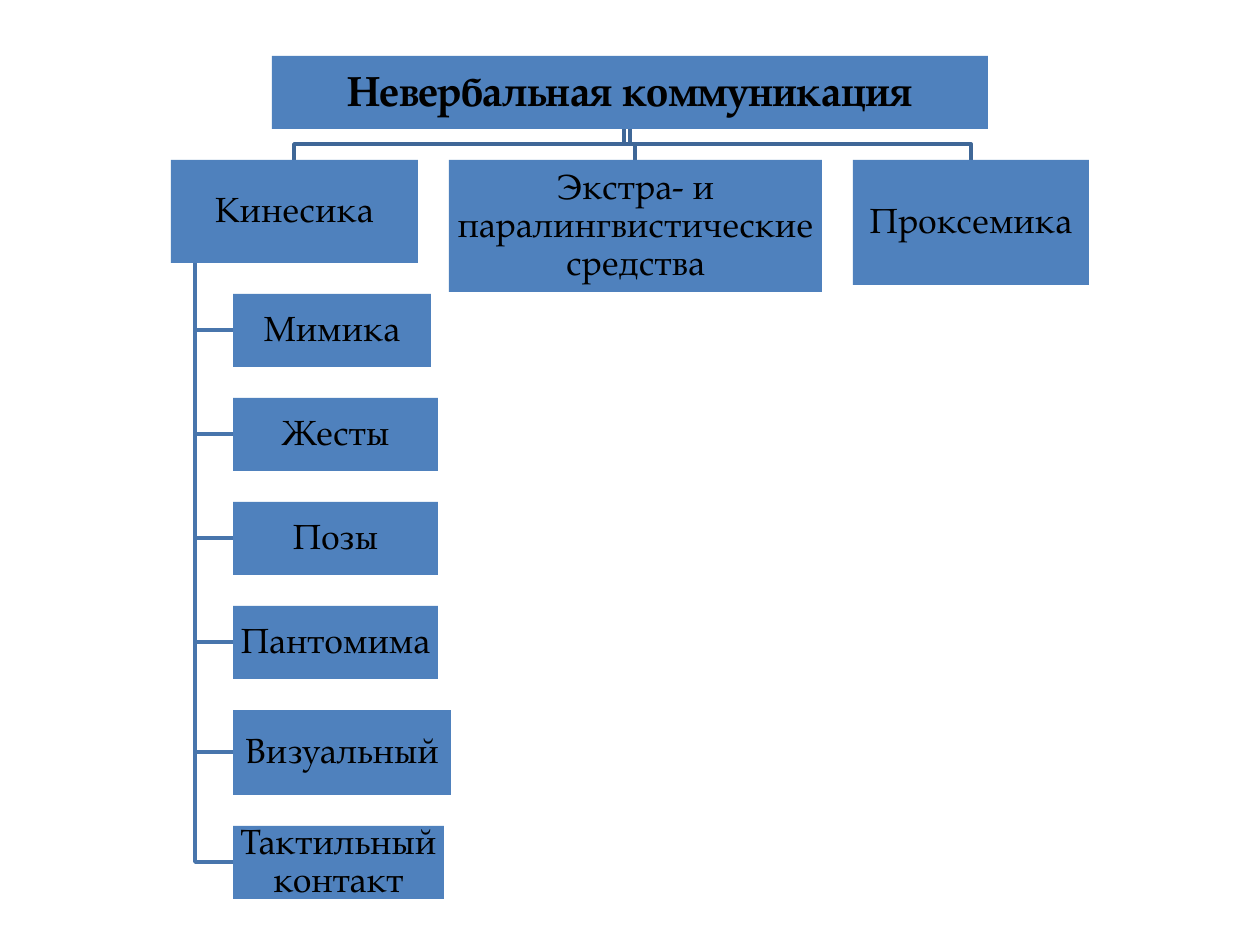
from dataclasses import dataclass

from pptx import Presentation, util as u
from pptx.dml.color import RGBColor
from pptx.enum import shapes, text

PX = 914400 / 126  # EMU in one px
FONT = "TeX Gyre Pagella"
COLORS = {
    "box": "4F81BD",
    "text": "000000",
    "branch": "3F6797",
    "twig": "4875AC",
}
GAP = 31  # between neighbouring boxes and between levels


@dataclass
class Box:
    label: str
    left: int
    top: int
    width: int
    height: int
    size: int = 20
    bold: bool = False
    inset: int = 1

    @property
    def right(self) -> int:
        return self.left + self.width

    @property
    def bottom(self) -> int:
        return self.top + self.height

    @property
    def center(self) -> int:
        return self.left + self.width // 2

    @property
    def middle(self) -> int:
        return self.top + self.height // 2


def px(value: int) -> u.Emu:
    return u.Emu(round(value * PX))


def color(name: str) -> RGBColor:
    return RGBColor.from_string(COLORS[name])


def draw_box(slide, box: Box) -> None:
    shape = slide.shapes.add_shape(
        shapes.MSO_SHAPE.RECTANGLE,
        px(box.left), px(box.top), px(box.width), px(box.height))
    shape.shadow.inherit = False
    shape.fill.solid()
    shape.fill.fore_color.rgb = color("box")
    shape.line.fill.background()

    frame = shape.text_frame
    frame.word_wrap = True
    frame.vertical_anchor = text.MSO_ANCHOR.MIDDLE
    frame.margin_left = frame.margin_right = px(box.inset)
    frame.margin_top = frame.margin_bottom = px(box.inset)
    frame.text = box.label
    paragraph = frame.paragraphs[0]
    paragraph.alignment = text.PP_ALIGN.CENTER
    paragraph.line_spacing = 0.9
    font = paragraph.runs[0].font
    font.name = FONT
    font.size = u.Pt(box.size)
    font.bold = box.bold
    font.color.rgb = color("text")


def draw_path(slide, points: list[tuple[int, int]], line_color: str) -> None:
    start, *rest = [(px(x), px(y)) for x, y in points]
    builder = slide.shapes.build_freeform(*start)
    builder.add_line_segments(rest, close=False)
    shape = builder.convert_to_shape()
    shape.shadow.inherit = False
    shape.fill.background()
    shape.line.color.rgb = color(line_color)
    shape.line.width = u.Pt(2)


def draw_branch(slide, start_x: int, parent: Box, child: Box) -> None:
    """Down from the parent, across, and down to the child's top."""
    turn = (parent.bottom + child.top) // 2
    draw_path(slide, [(start_x, parent.bottom), (start_x, turn),
                      (child.center, turn), (child.center, child.top)], "branch")


def draw_twig(slide, parent: Box, child: Box) -> None:
    """Down from the parent and across to the child's left side."""
    trunk = parent.left + parent.width // 10
    draw_path(slide, [(trunk, parent.bottom), (trunk, child.middle),
                      (child.left, child.middle)], "twig")


def main() -> None:
    presentation = Presentation()
    presentation.slide_width = px(1260)
    presentation.slide_height = px(945)
    slide = presentation.slides.add_slide(presentation.slide_layouts[6])

    # Root
    root = Box("Невербальная коммуникация", 272, 56, 716, 73,
               size=24, bold=True, inset=2)

    # Row of groups
    groups: list[Box] = []
    left = 171
    for label, width, height in [
        ("Кинесика", 247, 103),
        ("Экстра- и паралингвистические средства", 373, 132),
        ("Проксемика", 236, 125),
    ]:
        groups.append(Box(label, left, root.bottom + GAP, width, height))
        left = groups[-1].right + GAP
    kinesics, paralinguistics, proxemics = groups

    # Column of kinesic means
    means: list[Box] = []
    top = kinesics.bottom + GAP
    for label, width, height in [
        ("Мимика", 198, 73),
        ("Жесты", 205, 73),
        ("Позы", 205, 73),
        ("Пантомима", 205, 73),
        ("Визуальный", 218, 85),
        ("Тактильный контакт", 211, 73),
    ]:
        means.append(Box(label, 233, top, width, height))
        top = means[-1].bottom + GAP

    # Lines lie behind the boxes
    draw_branch(slide, root.center, root, proxemics)
    draw_branch(slide, root.center - 6, root, paralinguistics)
    for mean in reversed(means):
        draw_twig(slide, kinesics, mean)
    draw_branch(slide, root.center, root, kinesics)

    # Boxes
    for box in [root, kinesics, *means, paralinguistics, proxemics]:
        draw_box(slide, box)

    presentation.save("out.pptx")


if __name__ == "__main__":
    main()
